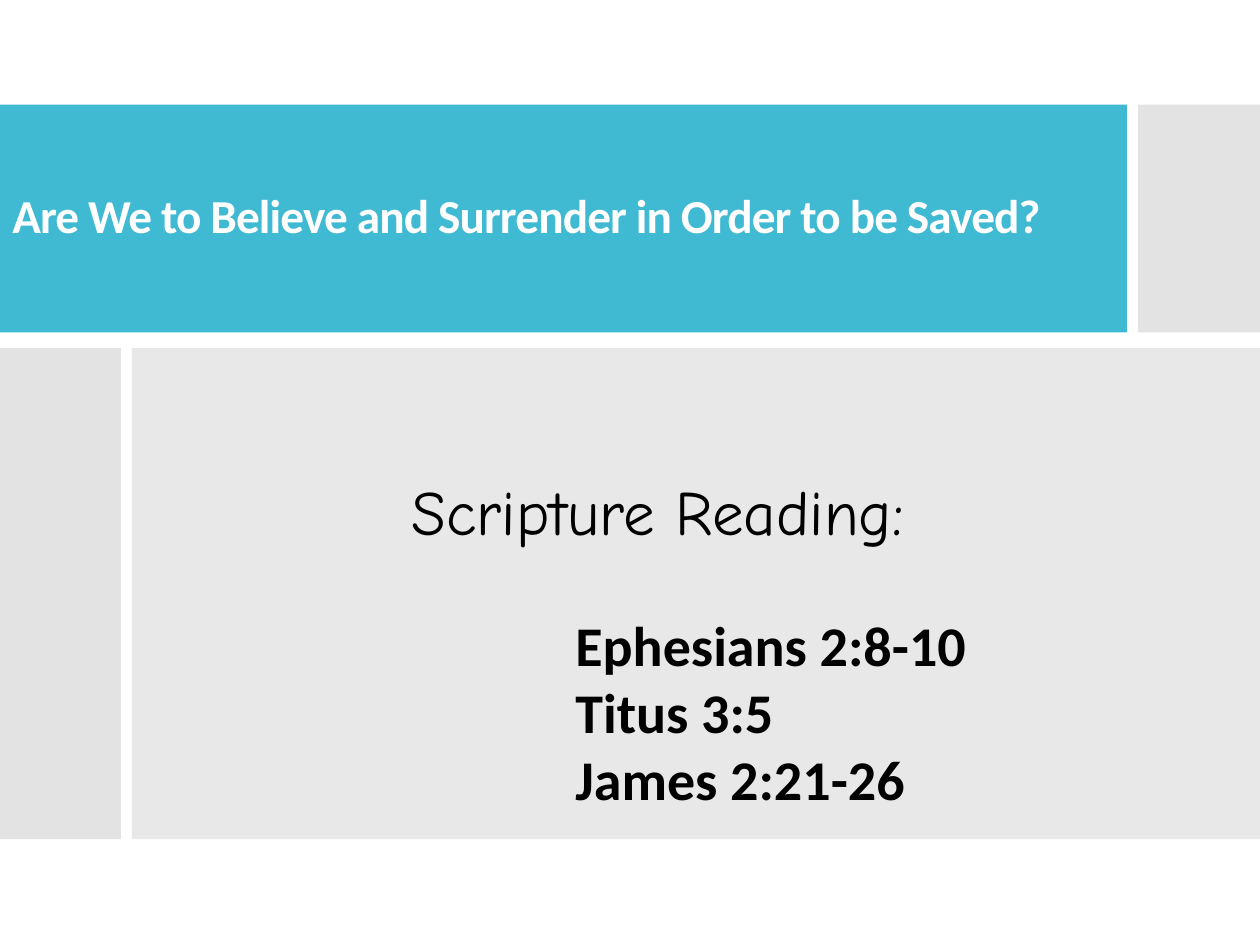
from lxml.etree import SubElement
from pptx import Presentation
from pptx.dml.color import RGBColor
from pptx.enum.shapes import MSO_SHAPE
from pptx.enum.text import MSO_ANCHOR
from pptx.oxml.ns import qn
from pptx.util import Cm, Pt

COLORS = {"teal": "40BAD2", "gray": "C8C8C8", "pale": "D9D9D9",
          "white": "FFFFFF", "black": "000000"}

presentation = Presentation()
presentation.slide_width, presentation.slide_height = Cm(25.4), Cm(19.05)
slide = presentation.slides.add_slide(presentation.slide_layouts[6])


def add_text_box(left, top, width, height, anchor):
    frame = slide.shapes.add_textbox(Cm(left), Cm(top), Cm(width), Cm(height)).text_frame
    frame.word_wrap = True
    frame.vertical_anchor = anchor
    return frame


def write(paragraph, text, color, font_format, spacing):
    """Fill a paragraph with one run, then apply its font and spacing values."""
    run = paragraph.add_run()
    run.text = text
    run.font.color.rgb = RGBColor.from_string(COLORS[color])
    for name, value in font_format.items():
        setattr(run.font, name, value)
    for name, value in spacing.items():
        setattr(paragraph, name, value)
    return run


# Panels: left, top, width, height in cm, colour, opacity in percent
header_top, header_height = 2.11, 4.59
body_top, body_height = 7.02, 9.9
panels = [
    (0, header_top, 22.72, header_height, "teal", 100),
    (22.94, header_top, 2.46, header_height, "gray", 50),
    (0, body_top, 2.44, body_height, "gray", 50),
    (2.66, body_top, 22.74, body_height, "pale", 60),
]
for left, top, width, height, color, opacity in panels:
    panel = slide.shapes.add_shape(MSO_SHAPE.RECTANGLE, Cm(left), Cm(top), Cm(width), Cm(height))
    panel.shadow.inherit = False
    panel.line.fill.background()
    panel.fill.solid()
    panel.fill.fore_color.rgb = RGBColor.from_string(COLORS[color])
    if opacity < 100:
        fill_color = panel.fill._xPr.find(".//" + qn("a:srgbClr"))
        SubElement(fill_color, qn("a:alpha"), val=str(opacity * 1000))

# Title
title = add_text_box(0, 3.02, 22.05, 2.77, MSO_ANCHOR.MIDDLE)
title_run = write(title.paragraphs[0], "Are We to Believe and Surrender in Order to be Saved?", "white",
                  {"name": "Calibri", "size": Pt(27), "bold": True}, {"line_spacing": 0.9})
title_run.font._element.set("spc", "-50")

# Scripture reading
reading = add_text_box(8.05, body_top, 14, body_height, MSO_ANCHOR.BOTTOM)
reading.margin_bottom = Cm(0.54)
write(reading.paragraphs[0], "Scripture Reading:", "black",
      {"name": "Comic Neue", "size": Pt(36)}, {"line_spacing": 0.9})
for index, passage in enumerate(["Ephesians 2:8-10", "Titus 3:5", "James 2:21-26"]):
    paragraph = reading.add_paragraph()
    write(paragraph, passage, "black",
          {"name": "Calibri", "size": Pt(32), "bold": True},
          {"line_spacing": 0.9, "space_before": Pt(1.9 if index else 39), "space_after": Pt(1.9)})
    paragraph._p.get_or_add_pPr().set("marL", str(Cm(3.3)))

presentation.save("out.pptx")
